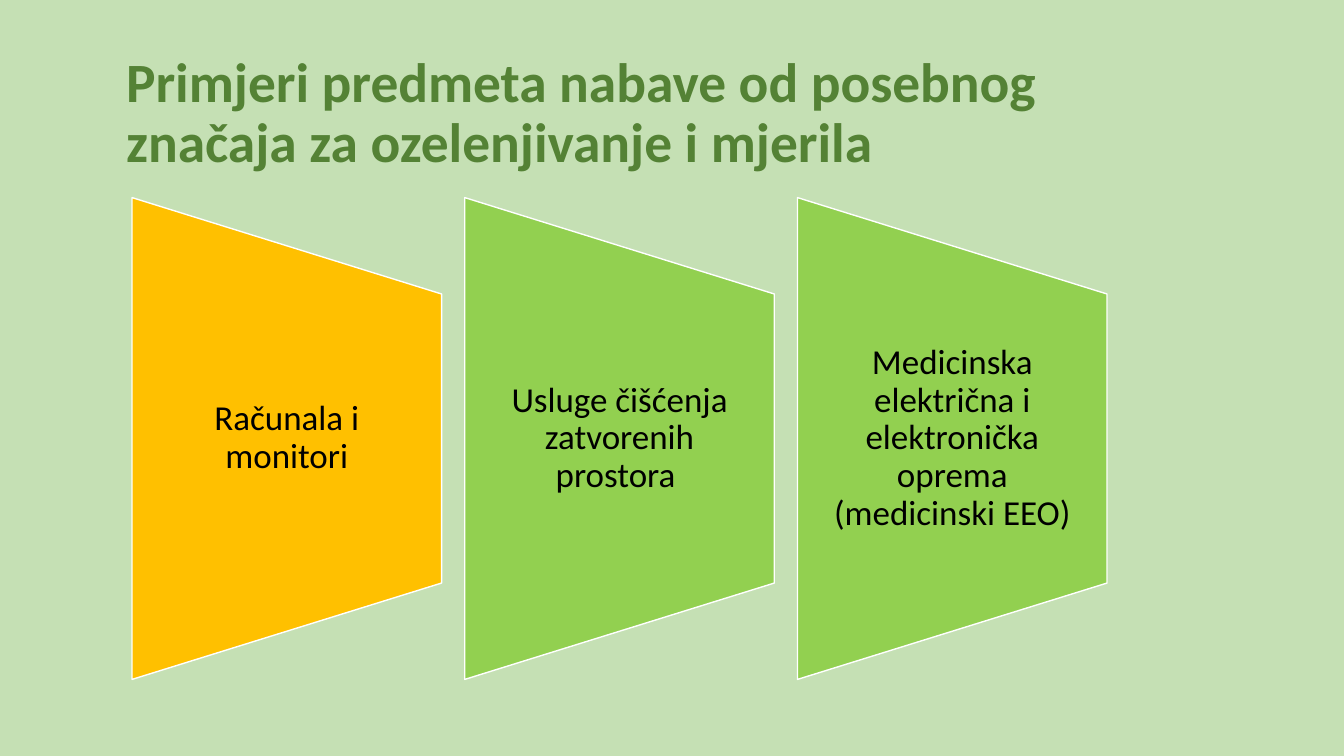
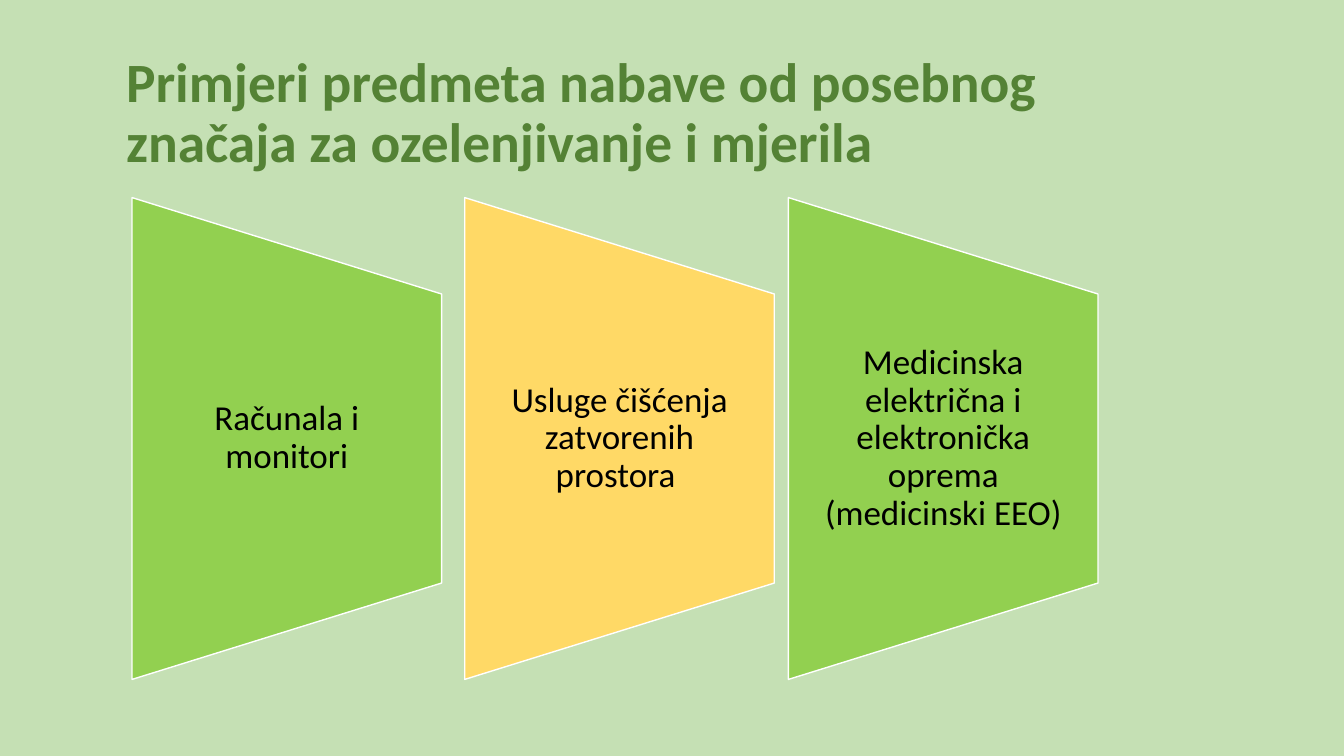
from pptx import Presentation
from pptx.dml.color import RGBColor
from pptx.enum.shapes import MSO_SHAPE
from pptx.enum.text import MSO_ANCHOR, MSO_AUTO_SIZE, PP_ALIGN
from pptx.util import Inches, Pt

PALE_GREEN = RGBColor(0xC5, 0xE0, 0xB4)
DARK_GREEN = RGBColor(0x54, 0x82, 0x35)
LIME = RGBColor(0x92, 0xD0, 0x50)
AMBER = RGBColor(0xFF, 0xC0, 0x00)
SOFT_YELLOW = RGBColor(0xFF, 0xD9, 0x66)
WHITE = RGBColor(0xFF, 0xFF, 0xFF)
BLACK = RGBColor(0, 0, 0)

FONT = "Calibri"
HEADING = "Primjeri predmeta nabave od posebnog značaja za ozelenjivanje i mjerila"
SUBJECTS = (
    "Računala i monitori",
    "Usluge čišćenja zatvorenih prostora ",
    "Medicinska električna i elektronička oprema (medicinski EEO)",
)
PANEL_TOP, PANEL_WIDTH, PANEL_HEIGHT = 1.96, 3.07, 4.78
SLIDES = (
    ((1.31, 4.61, 7.91), (AMBER, LIME, LIME)),
    ((1.31, 4.61, 7.82), (LIME, SOFT_YELLOW, LIME)),
)


def write(frame, text, size, color, bold=False, align=PP_ALIGN.LEFT, inset=0.1):
    """Fill a text frame with one formatted, vertically centred paragraph."""
    frame.word_wrap = True
    frame.auto_size = MSO_AUTO_SIZE.NONE
    frame.vertical_anchor = MSO_ANCHOR.MIDDLE
    frame.margin_left = frame.margin_right = Inches(inset)
    frame.margin_top = frame.margin_bottom = 0
    frame.text = text
    paragraph = frame.paragraphs[0]
    paragraph.alignment = align
    paragraph.line_spacing = 0.9
    paragraph.space_before = Pt(0)
    font = paragraph.runs[0].font
    font.name, font.size, font.bold = FONT, Pt(size), bold
    font.color.rgb = color


def add_heading(slide, left, top, width, height):
    """Place the shared heading in the title placeholder."""
    heading = slide.shapes.title
    heading.left, heading.top = Inches(left), Inches(top)
    heading.width, heading.height = Inches(width), Inches(height)
    write(heading.text_frame, HEADING, 39.6, DARK_GREEN, bold=True)


def add_panel(slide, subject, color, left, top, width, height):
    """Draw a trapezoid tapering to the right inside the box, with its subject."""
    turn_shift = (height - width) / 2
    trapezoid = slide.shapes.add_shape(
        MSO_SHAPE.FLOWCHART_MANUAL_OPERATION,
        Inches(left - turn_shift), Inches(top + turn_shift),
        Inches(height), Inches(width),
    )
    trapezoid.rotation = 270
    trapezoid.shadow.inherit = False
    trapezoid.fill.solid()
    trapezoid.fill.fore_color.rgb = color
    trapezoid.line.color.rgb = WHITE
    trapezoid.line.width = Pt(1)
    label = slide.shapes.add_textbox(
        Inches(left), Inches(top + height * 0.2),
        Inches(width), Inches(height * 0.6),
    )
    write(label.text_frame, subject, 25, BLACK, align=PP_ALIGN.CENTER, inset=0.17)


def add_subjects_slide(deck, lefts, colors):
    """Add a slide with the heading and one panel for each subject."""
    slide = deck.slides.add_slide(deck.slide_layouts.get_by_name("Title Only"))
    add_heading(slide, 1.15, 0.6, 10.7, 1.08)
    for subject, left, color in zip(SUBJECTS, lefts, colors):
        add_panel(slide, subject, color, left, PANEL_TOP, PANEL_WIDTH, PANEL_HEIGHT)


def main():
    """Build and save the presentation."""
    deck = Presentation()
    deck.slide_width, deck.slide_height = Inches(13.33), Inches(7.5)
    backdrop = deck.slide_master.background.fill
    backdrop.solid()
    backdrop.fore_color.rgb = PALE_GREEN
    for lefts, colors in SLIDES:
        add_subjects_slide(deck, lefts, colors)
    deck.save("out.pptx")


if __name__ == "__main__":
    main()
